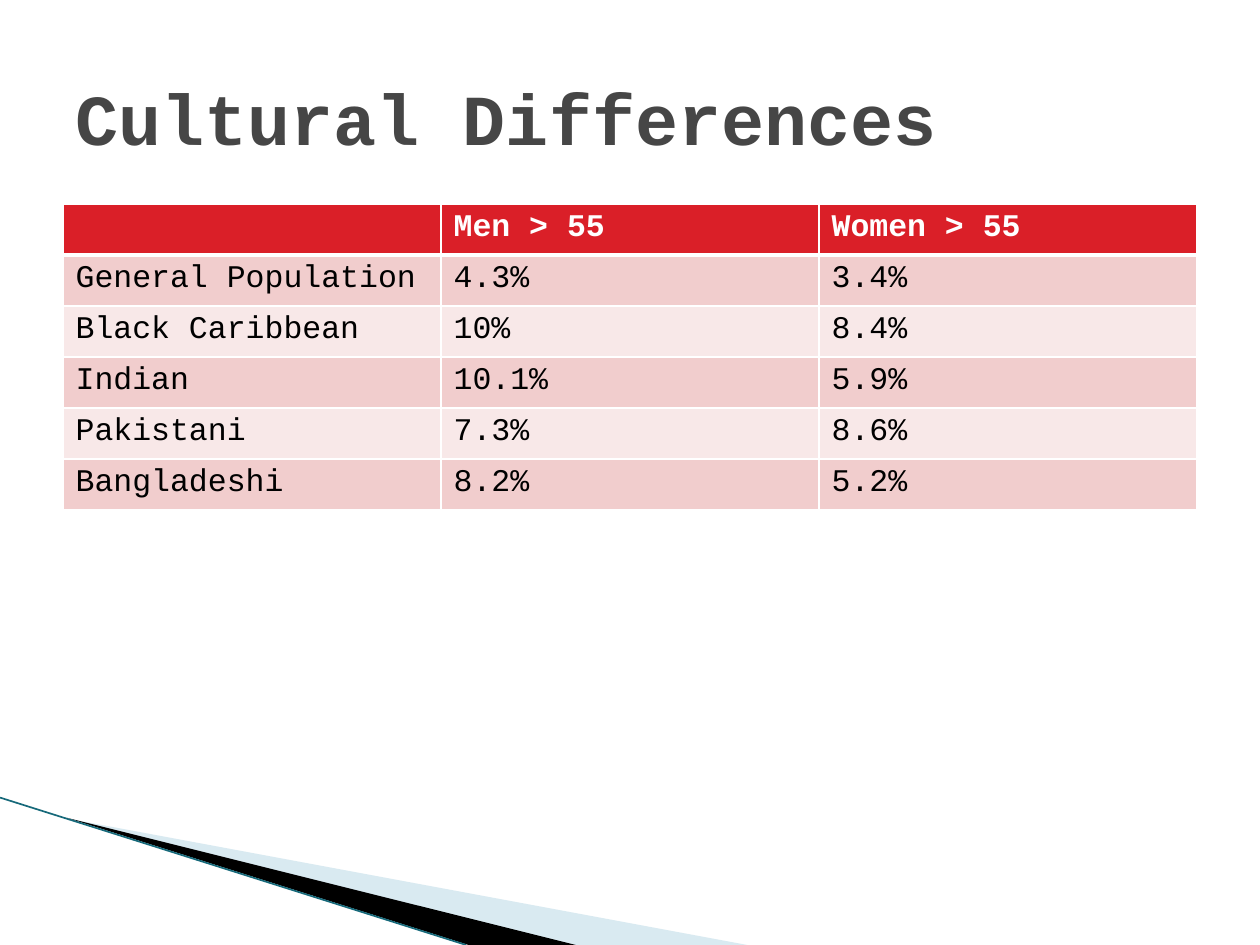
import pptx
import pptx.util
import pptx.dml.color
import pptx.enum.text
import pptx.oxml.ns
from lxml import etree

Inches, Pt = pptx.util.Inches, pptx.util.Pt
RGBColor = pptx.dml.color.RGBColor
qn = pptx.oxml.ns.qn

FONT = "Courier New"
WHITE = RGBColor(0xFF, 0xFF, 0xFF)
BLACK = RGBColor(0x00, 0x00, 0x00)
GREY = RGBColor(0x46, 0x46, 0x46)
RED = RGBColor(0xDA, 0x1F, 0x28)
PINK = RGBColor(0xF1, 0xCD, 0xCD)
PALE_PINK = RGBColor(0xF8, 0xE8, 0xE8)
PALE_BLUE = RGBColor(0xA0, 0xCB, 0xDC)
TEAL = RGBColor(0x16, 0x69, 0x7A)

ROWS = [
    ("", "Men > 55", "Women > 55"),
    ("General Population", "4.3%", "3.4%"),
    ("Black Caribbean", "10%", "8.4%"),
    ("Indian", "10.1%", "5.9%"),
    ("Pakistani", "7.3%", "8.6%"),
    ("Bangladeshi", "8.2%", "5.2%"),
]


def set_font(p, size, color, bold):
    p.font.name = FONT
    p.font.size = Pt(size)
    p.font.bold = bold
    p.font.color.rgb = color


def add_wedge(slide, points, color, alpha=None):
    start, *rest = [(Inches(x), Inches(y)) for x, y in points]
    builder = slide.shapes.build_freeform(*start)
    builder.add_line_segments(rest, close=True)
    s = builder.convert_to_shape()
    s.shadow.inherit = False
    s.fill.solid()
    s.fill.fore_color.rgb = color
    s.line.fill.background()
    if alpha is not None:
        clr = s.fill._xPr.find(qn("a:solidFill"))[0]
        etree.SubElement(clr, qn("a:alpha"), val=str(alpha * 1000))


def add_corner(slide, left, top, width, height):
    """Sweeping wedges and the thin line across the bottom left corner."""
    bottom = top + height
    add_wedge(slide, [(left + 0.55, top + 0.17), (left + width, bottom),
                      (left + 4.56, bottom)], PALE_BLUE, alpha=40)
    add_wedge(slide, [(left + 0.53, top + 0.16), (left + 4.57, bottom),
                      (left + 3.72, bottom)], BLACK)
    line = slide.shapes.add_connector(
        pptx.enum.shapes.MSO_CONNECTOR.STRAIGHT,
        Inches(left), Inches(top), Inches(left + 3.7), Inches(bottom))
    line.line.color.rgb = TEAL
    line.line.width = Pt(0.95)
    etree.SubElement(line._element.spPr, qn("a:effectLst"))


def set_borders(cell, bottom_width):
    tcPr = cell._tc.get_or_add_tcPr()
    for side, width in (("L", 1), ("R", 1), ("T", 1), ("B", bottom_width)):
        ln = etree.SubElement(tcPr, qn("a:ln" + side), w=str(Pt(width)))
        fill = etree.SubElement(ln, qn("a:solidFill"))
        etree.SubElement(fill, qn("a:srgbClr"), val=str(WHITE))


def add_rates_table(slide, left, top, width, height):
    frame = slide.shapes.add_table(len(ROWS), len(ROWS[0]), Inches(left),
                                   Inches(top), Inches(width), Inches(height))
    for i, row in enumerate(ROWS):
        header = i == 0
        color = RED if header else PINK if i % 2 else PALE_PINK
        for j, text in enumerate(row):
            cell = frame.table.cell(i, j)
            set_borders(cell, 3 if header else 1)
            cell.fill.solid()
            cell.fill.fore_color.rgb = color
            cell.text = text
            set_font(cell.text_frame.paragraphs[0], 18,
                     WHITE if header else BLACK, header)
    # The header's heavy rule is shared with the row beneath it
    for cell in frame.table.rows[1].cells:
        cell._tc.tcPr.find(qn("a:lnT")).set("w", str(Pt(3)))


def place_title(slide, text, left, top, width, height):
    title = slide.shapes.title
    title.left, title.top = Inches(left), Inches(top)
    title.width, title.height = Inches(width), Inches(height)
    tf = title.text_frame
    tf.text = text
    tf.word_wrap = True
    tf.vertical_anchor = pptx.enum.text.MSO_ANCHOR.MIDDLE
    p = tf.paragraphs[0]
    p.alignment = pptx.enum.text.PP_ALIGN.LEFT
    set_font(p, 41, GREY, True)


def main():
    prs = pptx.Presentation()
    prs.slide_width, prs.slide_height = Inches(10), Inches(7.5)
    slide = prs.slides.add_slide(prs.slide_layouts[5])
    add_corner(slide, 0, 6.33, 5.93, 1.17)
    add_rates_table(slide, 0.5, 1.62, 9, 2.43)
    place_title(slide, "Cultural Differences", 0.5, 0.3, 9, 1.25)
    prs.save("out.pptx")


if __name__ == "__main__":
    main()
